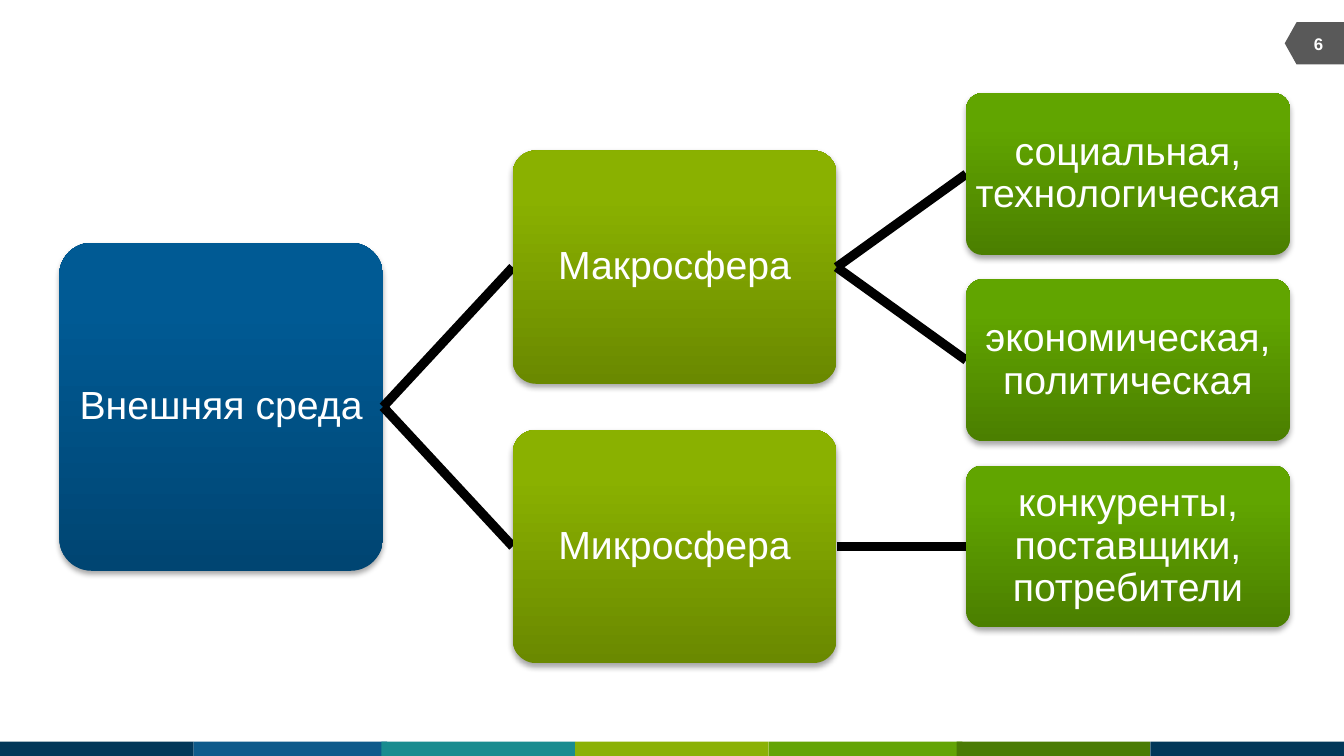
from dataclasses import dataclass, field

from lxml.etree import SubElement
from pptx import Presentation
from pptx.dml.color import RGBColor
from pptx.enum.shapes import MSO_CONNECTOR, MSO_SHAPE
from pptx.enum.text import MSO_ANCHOR, PP_ALIGN
from pptx.oxml import parse_xml
from pptx.oxml.ns import nsdecls, qn
from pptx.util import Cm, Pt

WHITE = RGBColor(0xFF, 0xFF, 0xFF)
BLACK = RGBColor(0x00, 0x00, 0x00)
GRAY = RGBColor(0x59, 0x59, 0x59)
NAVY = RGBColor(0x02, 0x37, 0x59)
BLUE = RGBColor(0x0E, 0x5A, 0x8B)
TEAL = RGBColor(0x19, 0x8C, 0x8F)
LIME = RGBColor(0x8B, 0xB1, 0x06)
GREEN = RGBColor(0x63, 0xA4, 0x06)
DARK_GREEN = RGBColor(0x4A, 0x7B, 0x04)
LEVEL_GRADIENTS = [
    (RGBColor(0x00, 0x45, 0x72), RGBColor(0x00, 0x5A, 0x94)),
    (RGBColor(0x6A, 0x89, 0x00), RGBColor(0x8A, 0xB1, 0x00)),
    (RGBColor(0x4B, 0x7F, 0x00), RGBColor(0x61, 0xA5, 0x00)),
]

FONT = "Arial"
SLIDE_WIDTH, SLIDE_HEIGHT = 25.4, 14.29
STRIPES = [
    (0, NAVY), (3.66, BLUE), (7.21, TEAL), (10.87, LIME),
    (14.53, GREEN), (18.08, DARK_GREEN), (21.74, NAVY),
]
STRIPE_WIDTH = 3.66
NODE_WIDTH = 6.12
LEVEL_HEIGHTS = [6.2, 4.41, 3.06]
LEAF_PITCH = 3.52


@dataclass
class Node:
    text: str
    children: list = field(default_factory=list)
    center: float = 0


ENVIRONMENT = Node("Внешняя среда", [
    Node("Макросфера", [
        Node("социальная, технологическая"),
        Node("экономическая, политическая"),
    ]),
    Node("Микросфера", [Node("конкуренты, поставщики, потребители")]),
])


def add_plain_shape(slide, kind, left, top, width, height, color):
    shape = slide.shapes.add_shape(kind, Cm(left), Cm(top), Cm(width), Cm(height))
    shape.shadow.inherit = False
    shape.fill.solid()
    shape.fill.fore_color.rgb = color
    shape.line.fill.background()
    return shape


def write_text(shape, text, size, bold=False):
    frame = shape.text_frame
    frame.text = text
    frame.word_wrap = True
    frame.vertical_anchor = MSO_ANCHOR.MIDDLE
    paragraph = frame.paragraphs[0]
    paragraph.alignment = PP_ALIGN.CENTER
    font = paragraph.runs[0].font
    font.name, font.size, font.bold = FONT, Pt(size), bold
    font.color.rgb = WHITE
    return frame


def add_footer_stripes(slide, top, height):
    for left, color in STRIPES:
        add_plain_shape(slide, MSO_SHAPE.RECTANGLE, left, top, STRIPE_WIDTH, height, color)


def add_page_badge(slide, left, top, width, height, number):
    middle_x, middle_y = left + width / 2, top + height / 2
    badge = add_plain_shape(
        slide, MSO_SHAPE.FLOWCHART_OFFPAGE_CONNECTOR,
        middle_x - height / 2, middle_y - width / 2, height, width, GRAY,
    )
    badge.rotation = 90
    label_width, label_height = 1.07, 0.76
    label = slide.shapes.add_textbox(
        Cm(middle_x + 0.08 - label_width / 2), Cm(middle_y - label_height / 2),
        Cm(label_width), Cm(label_height),
    )
    write_text(label, number, 9, bold=True)


def add_soft_shadow(shape):
    shape.shadow.inherit = False
    effects = shape._element.spPr.find(qn("a:effectLst"))
    effects.append(parse_xml(
        f'<a:outerShdw {nsdecls("a")} blurRad="40000" dist="23000" dir="5400000" '
        'rotWithShape="0"><a:srgbClr val="000000"><a:alpha val="35000"/>'
        '</a:srgbClr></a:outerShdw>'
    ))


def add_node_box(slide, left, top, width, height, text, gradient):
    box = slide.shapes.add_shape(
        MSO_SHAPE.ROUNDED_RECTANGLE, Cm(left), Cm(top), Cm(width), Cm(height)
    )
    box.adjustments[0] = 0.1
    box.line.fill.background()
    box.fill.gradient()
    box.fill.gradient_angle = 90
    for stop, position, color in zip(box.fill.gradient_stops, (0, 0.8), gradient):
        stop.position = position
        stop.color.rgb = color
    add_soft_shadow(box)
    frame = write_text(box, text, 21)
    frame.margin_left = frame.margin_right = Cm(0.03)
    frame.margin_top = frame.margin_bottom = Cm(0.03)
    frame.paragraphs[0].line_spacing = 0.9


def add_branch(slide, start_x, start_y, end_x, end_y):
    branch = slide.shapes.add_connector(
        MSO_CONNECTOR.STRAIGHT, Cm(start_x), Cm(start_y), Cm(end_x), Cm(end_y)
    )
    branch.line.color.rgb = BLACK
    branch.line.width = Pt(5)
    SubElement(branch._element.spPr, qn("a:effectLst"))


def place_centers(node, next_leaf):
    if not node.children:
        node.center = next_leaf
        return next_leaf + LEAF_PITCH
    for child in node.children:
        next_leaf = place_centers(child, next_leaf)
    node.center = sum(child.center for child in node.children) / len(node.children)
    return next_leaf


def add_subtree(slide, node, left, step, level=0):
    height = LEVEL_HEIGHTS[level]
    add_node_box(slide, left, node.center - height / 2, NODE_WIDTH, height,
                 node.text, LEVEL_GRADIENTS[level])
    for child in node.children:
        add_branch(slide, left + NODE_WIDTH, node.center, left + step, child.center)
        add_subtree(slide, child, left + step, step, level + 1)


def add_tree(slide, left, top, width, root):
    place_centers(root, top + LEVEL_HEIGHTS[-1] / 2)
    step = (width - NODE_WIDTH) / (len(LEVEL_HEIGHTS) - 1)
    add_subtree(slide, root, left, step)


def main():
    presentation = Presentation()
    presentation.slide_width = Cm(SLIDE_WIDTH)
    presentation.slide_height = Cm(SLIDE_HEIGHT)
    slide = presentation.slides.add_slide(presentation.slide_layouts[6])
    add_footer_stripes(slide, 14.02, 0.27)
    add_page_badge(slide, 24.28, 0.42, 1.12, 0.8, "6")
    add_tree(slide, 1.12, 1.76, 23.26, ENVIRONMENT)
    presentation.save("out.pptx")


if __name__ == "__main__":
    main()
